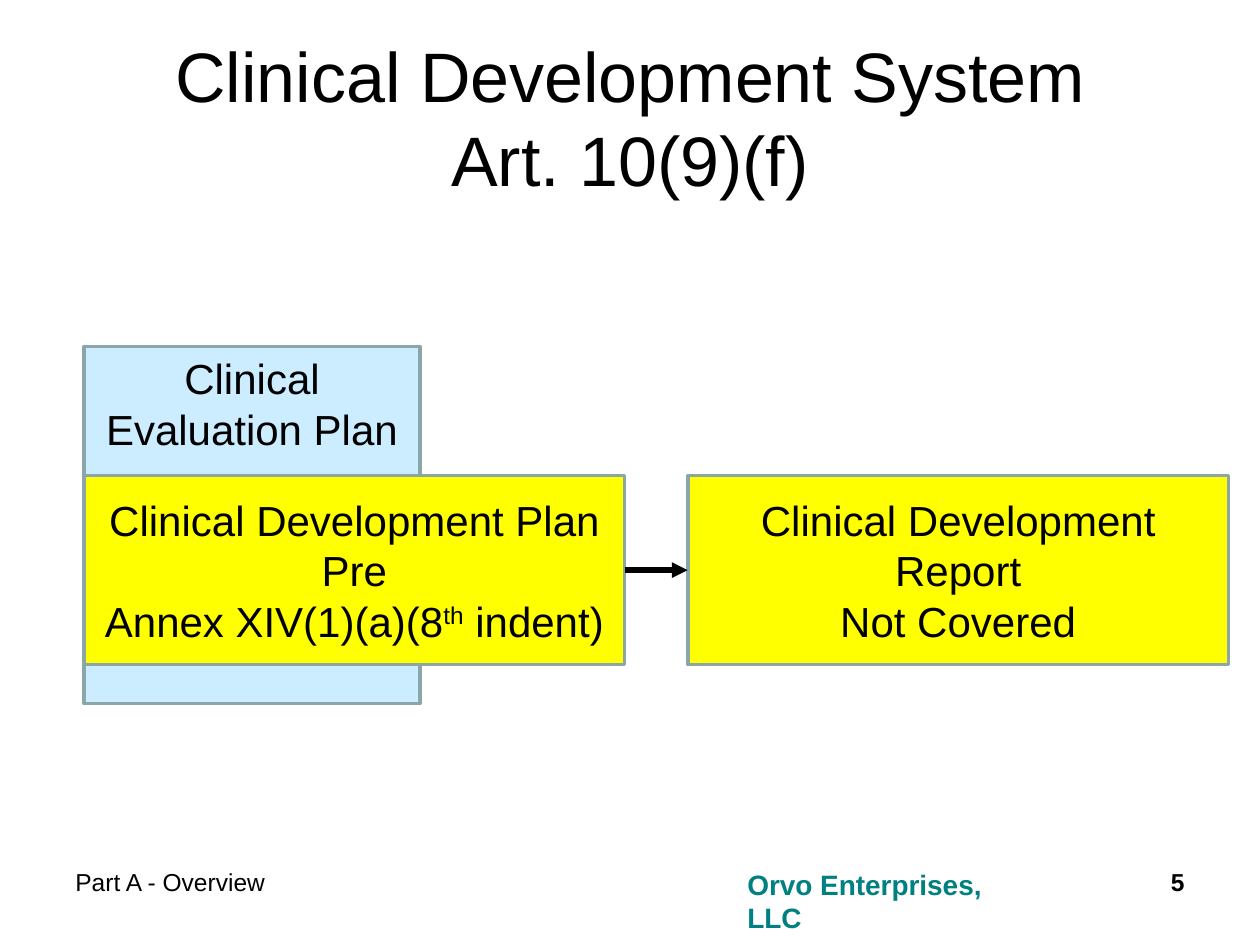
"""Build the Clinical Development System slide."""
from dataclasses import dataclass
from typing import Any

from lxml import etree
from pptx import Presentation, util as u
from pptx.dml.color import RGBColor
from pptx.enum import shapes, text
from pptx.oxml.ns import qn

UNIT = u.Inches(1) / 12


@dataclass(frozen=True)
class Theme:
    font: str = "Arial"
    ink: str = "000000"
    teal: str = "008080"
    outline: str = "8AA6A8"
    sky: str = "CCECFF"
    yellow: str = "FFFF00"
    title_size: int = 40
    box_size: int = 24
    owner_size: int = 16
    footer_size: int = 14


@dataclass(frozen=True)
class Area:
    col: float
    row: float
    cols: float
    rows: float

    def emu(self) -> list[int]:
        return [round(n * UNIT) for n in (self.col, self.row, self.cols, self.rows)]


@dataclass(frozen=True)
class Box:
    area: Area
    fill: str
    lines: tuple[tuple[str, ...], ...]
    anchor: Any = text.MSO_ANCHOR.MIDDLE


@dataclass(frozen=True)
class Label:
    area: Area
    wording: str
    size: int
    color: str
    bold: bool = False
    align: Any = text.PP_ALIGN.LEFT


THEME = Theme()
PLAN_COL, STAGE_ROW, STAGE_COLS, STAGE_ROWS, GAP = 8, 45.3, 51.5, 18, 6
TITLE = Label(Area(6, 3.6, 108, 15), "Clinical Development System\vArt. 10(9)(f)",
              THEME.title_size, THEME.ink, align=text.PP_ALIGN.CENTER)
EVALUATION = Box(Area(PLAN_COL, 33, 32, 34), THEME.sky,
                 (("Clinical Evaluation Plan",),), text.MSO_ANCHOR.TOP)
PLAN = Box(Area(PLAN_COL, STAGE_ROW, STAGE_COLS, STAGE_ROWS), THEME.yellow,
           (("Clinical Development Plan",), ("Pre",),
            ("Annex XIV(1)(a)(8", "^th", " indent)")))
REPORT = Box(Area(PLAN_COL + STAGE_COLS + GAP, STAGE_ROW, STAGE_COLS, STAGE_ROWS),
             THEME.yellow, (("Clinical Development Report",), ("Not Covered",)))
FOOTERS = (
    Label(Area(70, 82, 28, 4.4), "Orvo Enterprises, LLC", THEME.owner_size, THEME.teal, True),
    Label(Area(6, 82, 62, 6.2), "Part A - Overview", THEME.footer_size, THEME.ink),
    Label(Area(101, 82, 13, 6.2), "5", THEME.footer_size, THEME.ink, True,
          text.PP_ALIGN.RIGHT),
)


def apply(target: Any, values: dict[str, Any]) -> None:
    """Set each named attribute on the target."""
    for name, value in values.items():
        setattr(target, name, value)


def style_font(font: Any, size: int, color: str, bold: bool = False) -> None:
    """Give a font the theme face with the given look."""
    apply(font, {"name": THEME.font, "size": u.Pt(size), "bold": bold})
    font.color.rgb = RGBColor.from_string(color)


def write_label(shape: Any, label: Label, anchor: Any) -> None:
    """Place a label's wording in a placeholder or text box."""
    apply(shape, dict(zip(("left", "top", "width", "height"), label.area.emu())))
    frame = shape.text_frame
    apply(frame, {"word_wrap": True, "vertical_anchor": anchor, "text": label.wording,
                  "auto_size": text.MSO_AUTO_SIZE.NONE})
    paragraph = frame.paragraphs[0]
    paragraph.alignment = label.align
    for run in paragraph.runs:
        style_font(run.font, label.size, label.color, label.bold)


def draw_box(slide: Any, box: Box) -> Any:
    """Draw an outlined rectangle with centred lines of text."""
    rectangle = slide.shapes.add_shape(shapes.MSO_SHAPE.RECTANGLE, *box.area.emu())
    rectangle.shadow.inherit = False
    rectangle.fill.solid()
    rectangle.fill.fore_color.rgb = RGBColor.from_string(box.fill)
    rectangle.line.color.rgb = RGBColor.from_string(THEME.outline)
    rectangle.line.width = u.Pt(2)
    frame = rectangle.text_frame
    apply(frame, {"word_wrap": True, "vertical_anchor": box.anchor})
    for index, pieces in enumerate(box.lines):
        paragraph = frame.add_paragraph() if index else frame.paragraphs[0]
        paragraph.alignment = text.PP_ALIGN.CENTER
        for piece in pieces:
            run = paragraph.add_run()
            run.text = piece.removeprefix("^")
            style_font(run.font, THEME.box_size, THEME.ink)
            if piece.startswith("^"):
                run._r.get_or_add_rPr().set("baseline", "30000")
    return rectangle


def draw_arrow(slide: Any, source: Any, target: Any) -> None:
    """Join the right side of one box to the left side of another."""
    arrow = slide.shapes.add_connector(shapes.MSO_CONNECTOR.STRAIGHT, 0, 0, 0, 0)
    arrow.begin_connect(source, 3)
    arrow.end_connect(target, 1)
    arrow.line.color.rgb = RGBColor.from_string(THEME.ink)
    arrow.line.width = u.Pt(3)
    etree.SubElement(arrow.line._get_or_add_ln(), qn("a:tailEnd"), type="triangle")
    etree.SubElement(arrow._element.spPr, qn("a:effectLst"))


def main() -> None:
    """Assemble and save the slide."""
    deck = Presentation()
    apply(deck, {"slide_width": u.Inches(10), "slide_height": u.Inches(7.5)})
    slide = deck.slides.add_slide(deck.slide_layouts[5])
    write_label(slide.shapes.title, TITLE, text.MSO_ANCHOR.MIDDLE)
    for footer in FOOTERS:
        write_label(slide.shapes.add_textbox(0, 0, 0, 0), footer, text.MSO_ANCHOR.TOP)
    _, plan, report = [draw_box(slide, box) for box in (EVALUATION, PLAN, REPORT)]
    draw_arrow(slide, plan, report)
    deck.save("out.pptx")


if __name__ == "__main__":
    main()
